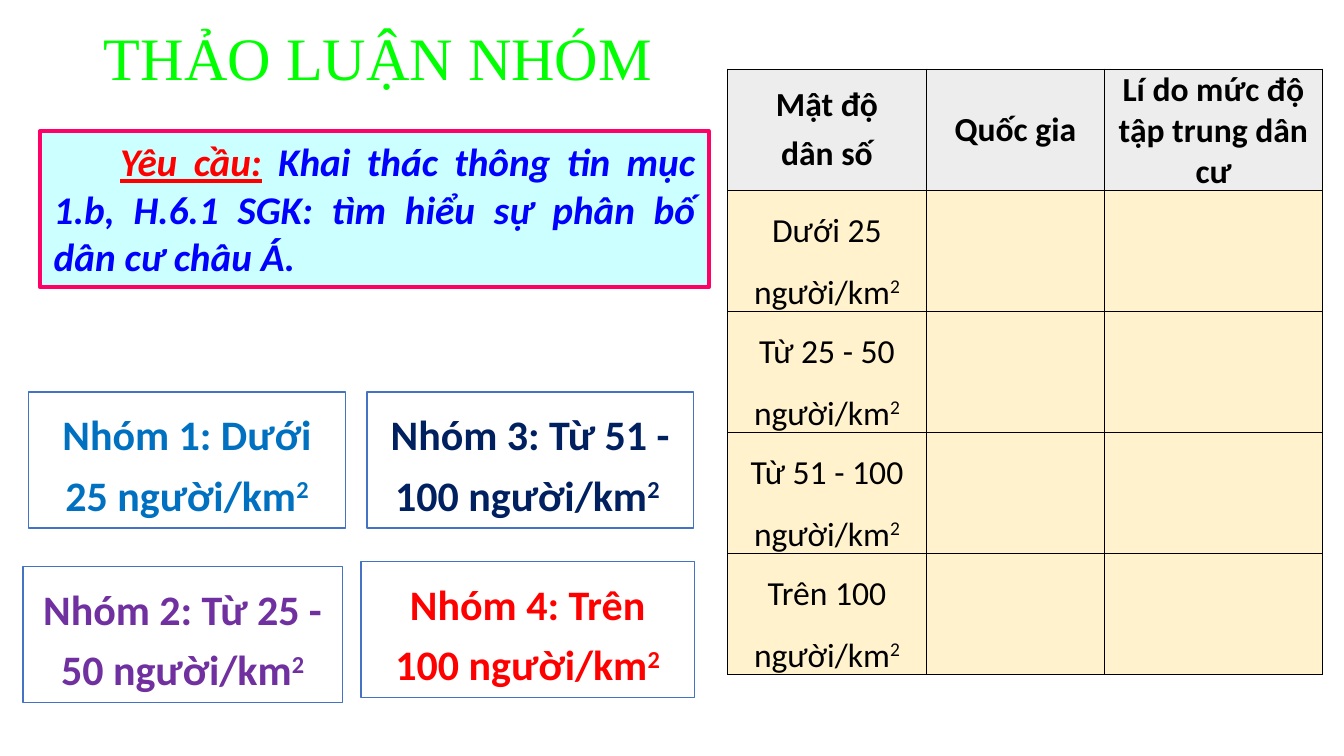
from dataclasses import dataclass

from lxml import etree
from pptx import Presentation
from pptx.dml.color import RGBColor
from pptx.enum.shapes import MSO_SHAPE
from pptx.enum.text import MSO_ANCHOR, MSO_AUTO_SIZE, PP_ALIGN
from pptx.oxml.ns import qn
from pptx.util import Pt

RECTANGLE = MSO_SHAPE.RECTANGLE
TOP, MIDDLE = MSO_ANCHOR.TOP, MSO_ANCHOR.MIDDLE
LEFT, CENTER, JUSTIFY = PP_ALIGN.LEFT, PP_ALIGN.CENTER, PP_ALIGN.JUSTIFY
FIXED, GROW = MSO_AUTO_SIZE.NONE, MSO_AUTO_SIZE.SHAPE_TO_FIT_TEXT


@dataclass(frozen=True)
class Theme:
    body_font: str = "Calibri"
    title_font: str = "Times New Roman"
    title_size: float = 43
    group_size: float = 30
    task_size: float = 28
    table_size: float = 24
    white: str = "FFFFFF"
    black: str = "000000"
    title: str = "00FF00"
    title_outline: str = "FF00FF"
    task_fill: str = "CCFFFF"
    task_border: str = "FF0066"
    task_label: str = "FF0000"
    task_text: str = "0000FF"
    group_border: str = "4472C4"
    header_fill: str = "EDEDED"
    body_fill: str = "FFF2CC"


def apply(target, values):
    for name, value in values.items():
        setattr(target, name, value)


def add_line(parent, tag, color, width):
    line = etree.SubElement(parent, qn(tag), w=str(Pt(width)))
    fill = etree.SubElement(line, qn("a:solidFill"))
    etree.SubElement(fill, qn("a:srgbClr"), val=color)
    return line


class SlideBuilder:
    def __init__(self, slide, theme):
        self.slide = slide
        self.theme = theme

    def run(self, paragraph, text, size, color, raised=False, **style):
        run = paragraph.add_run()
        run.text = text
        apply(run.font, {"name": self.theme.body_font, "size": Pt(size), **style})
        run.font.color.rgb = RGBColor.from_string(color)
        if raised:
            run._r.get_or_add_rPr().set("baseline", "30000")
        return run

    def box(self, bounds, fill, border=None, width=1, wrap=True,
            fit=GROW, anchor=TOP, **layout):
        box = self.slide.shapes.add_shape(RECTANGLE, *map(Pt, bounds))
        box.shadow.inherit = False
        box.fill.solid()
        box.fill.fore_color.rgb = RGBColor.from_string(fill)
        if border:
            box.line.color.rgb = RGBColor.from_string(border)
            box.line.width = Pt(width)
        else:
            box.line.fill.background()
        apply(box.text_frame, {
            "margin_left": Pt(9.6), "margin_right": Pt(9.6),
            "margin_top": Pt(4.8), "margin_bottom": Pt(4.8),
            "word_wrap": wrap, "auto_size": fit, "vertical_anchor": anchor,
        })
        paragraph = box.text_frame.paragraphs[0]
        apply(paragraph, layout)
        return paragraph

    def title(self, text, bounds):
        theme = self.theme
        paragraph = self.box(bounds, theme.white, wrap=False, fit=FIXED,
                             anchor=MIDDLE, alignment=LEFT)
        run = self.run(paragraph, text, theme.title_size, theme.title,
                       name=theme.title_font)
        properties = run._r.get_or_add_rPr()
        properties.insert(0, add_line(properties, "a:ln", theme.title_outline, 1.5))

    def task(self, label, text, bounds):
        theme = self.theme
        paragraph = self.box(bounds, theme.task_fill, theme.task_border, 3,
                             alignment=JUSTIFY)
        paragraph._p.get_or_add_pPr().set("indent", str(Pt(47.5)))
        style = {"bold": True, "italic": True}
        self.run(paragraph, label, theme.task_size, theme.task_label,
                 underline=True, **style)
        self.run(paragraph, " " + text, theme.task_size, theme.task_text, **style)

    def group(self, text, exponent, color, bounds):
        theme = self.theme
        paragraph = self.box(bounds, theme.white, theme.group_border,
                             alignment=CENTER, line_spacing=1.2)
        self.run(paragraph, text, theme.group_size, color, bold=True)
        self.run(paragraph, exponent, theme.group_size, color, True, bold=True)

    def cell(self, cell, fill):
        properties = cell._tc.get_or_add_tcPr()
        for side in ("a:lnL", "a:lnR", "a:lnT", "a:lnB"):
            add_line(properties, side, self.theme.black, 1)
        cell.fill.solid()
        cell.fill.fore_color.rgb = RGBColor.from_string(fill)
        apply(cell, {"margin_left": Pt(5.4), "margin_right": Pt(5.4),
                     "margin_top": 0, "margin_bottom": 0,
                     "vertical_anchor": MIDDLE})

    def table(self, headers, densities, origin, widths, row_height):
        theme = self.theme
        row_count = len(densities) + 1
        frame = self.slide.shapes.add_table(
            row_count, len(headers), *map(Pt, origin),
            Pt(sum(widths)), Pt(row_height * row_count))
        table = frame.table
        apply(table, {"first_row": False, "horz_banding": False})
        for column, width in zip(table.columns, widths):
            column.width = Pt(width)
        for index, row in enumerate(table.rows):
            row.height = Pt(row_height)
            for cell in row.cells:
                self.cell(cell, theme.body_fill if index else theme.header_fill)
        for column, header in enumerate(headers):
            frame = table.cell(0, column).text_frame
            for index, text in enumerate(header):
                paragraph = frame.add_paragraph() if index else frame.paragraphs[0]
                apply(paragraph, {"alignment": CENTER, "space_before": Pt(6)})
                self.run(paragraph, text, theme.table_size, theme.black, bold=True)
        for row, density in enumerate(densities, 1):
            paragraph = table.cell(row, 0).text_frame.paragraphs[0]
            apply(paragraph, {"alignment": CENTER, "space_before": Pt(6),
                              "line_spacing": 1.5})
            self.run(paragraph, density + " người/km", theme.table_size,
                     theme.black, bold=False)
            self.run(paragraph, "2", theme.table_size, theme.black, True, bold=False)


def main():
    presentation = Presentation()
    apply(presentation, {"slide_width": Pt(960), "slide_height": Pt(540)})
    slide = presentation.slides.add_slide(presentation.slide_layouts[6])
    builder = SlideBuilder(slide, Theme())
    densities = ("Dưới 25", "Từ 25 - 50", "Từ 51 - 100", "Trên 100")
    groups = (
        ("2", "0070C0", (20.2, 280.1, 226.8, 97.2)),
        ("2", "7030A0", (16.4, 404.6, 228.2, 97.2)),
        ("2 ", "002060", (262.1, 280.1, 233.3, 97.2)),
        ("2", "FF0000", (257.8, 401, 238.3, 97.2)),
    )
    builder.task("Yêu cầu:",
                 "Khai thác thông tin mục 1.b, H.6.1 SGK: "
                 "tìm hiểu sự phân bố dân cư châu Á.",
                 (28.8, 93.6, 477.4, 111.6))
    builder.title(" THẢO LUẬN NHÓM", (54.7, 6.5, 401.8, 67.7))
    for number, (density, group) in enumerate(zip(densities, groups), 1):
        builder.group(f"Nhóm {number}: {density} người/km", *group)
    builder.table(
        (("Mật độ", "dân số"), ("Quốc gia",), ("Lí do mức độ tập trung dân cư",)),
        densities, (519.8, 49.4), (141.8, 127.4, 155.5), 86.4)
    presentation.save("out.pptx")


if __name__ == "__main__":
    main()
